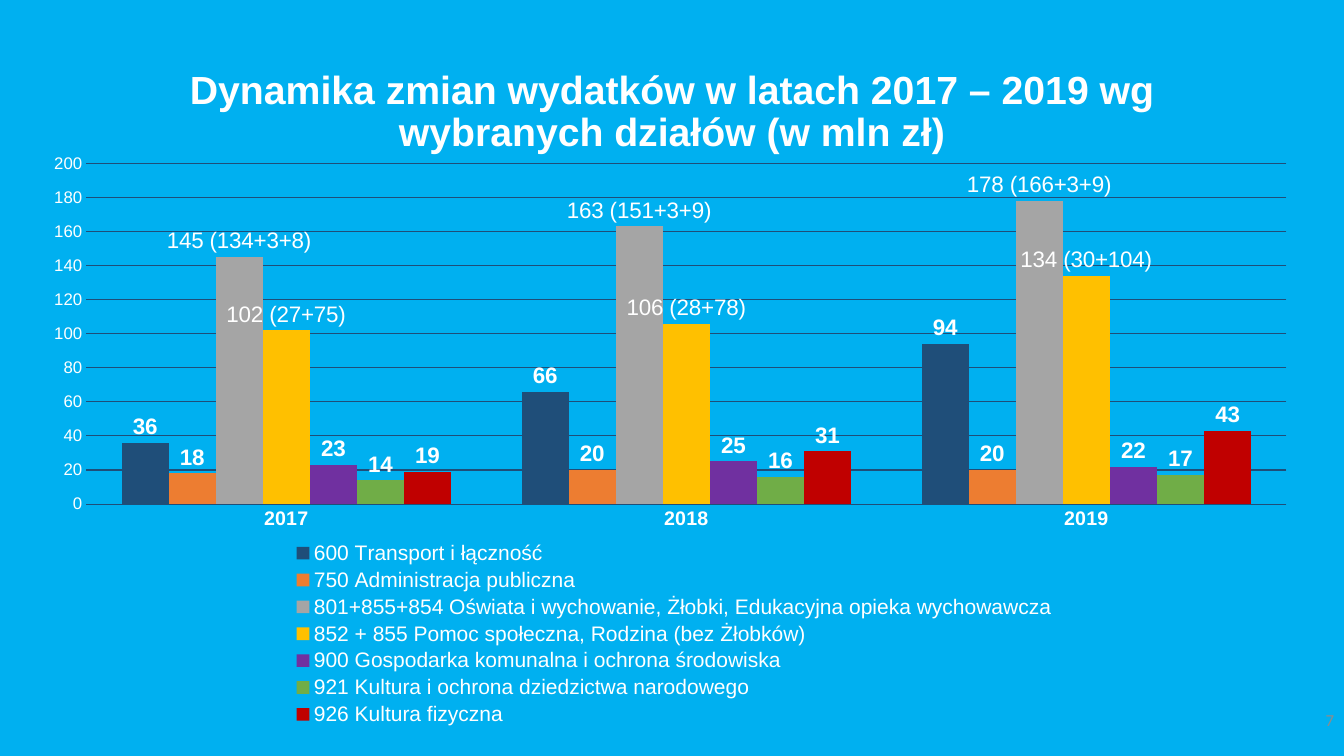
import pptx
import pptx.chart.data
import pptx.dml.color
import pptx.enum.chart
import pptx.enum.text
import pptx.oxml
import pptx.oxml.ns
import pptx.util

WIDE, HIGH = 13.33, 7.5
WHITE, SKY, NAVY, GREY = "FFFFFF", "00B0F0", "1F4E79", "8C8C8C"
YEARS = ["2017", "2018", "2019"]

# Name, colour, values, own label texts
SERIES = [
    ("600 Transport i łączność", NAVY, (36, 66, 94), ()),
    ("750 Administracja publiczna", "ED7D31", (18, 20, 20), ()),
    ("801+855+854 Oświata i wychowanie, Żłobki, Edukacyjna opieka wychowawcza",
     "A5A5A5", (145, 163, 178),
     ("145 (134+3+8)", "163 (151+3+9)", "178 (166+3+9)")),
    ("852 + 855 Pomoc społeczna, Rodzina (bez Żłobków)",
     "FFC000", (102, 106, 134),
     ("102 (27+75)", "106 (28+78)", "134 (30+104)")),
    ("900 Gospodarka komunalna i ochrona środowiska", "7030A0", (23, 25, 22), ()),
    ("921 Kultura i ochrona dziedzictwa narodowego", "70AD47", (14, 16, 17), ()),
    ("926 Kultura fizyczna", "C00000", (19, 31, 43), ()),
]


def tint(code):
    return pptx.dml.color.RGBColor.from_string(code)


def fill(part, code):
    part.fill.solid()
    part.fill.fore_color.rgb = tint(code)


def style(font, size, code=WHITE, bold=False, name="Arial"):
    values = {"size": pptx.util.Pt(size), "bold": bold, "name": name}
    for key, value in values.items():
        setattr(font, key, value)
    font.color.rgb = tint(code)


def place(left, top, width, height):
    """Turn shares of the slide into lengths."""
    shares = (left * WIDE, top * HIGH, width * WIDE, height * HIGH)
    return [pptx.util.Inches(share) for share in shares]


def write(slide, box, text, align, **look):
    frame = slide.shapes.add_textbox(*place(*box)).text_frame
    frame.word_wrap = True
    frame.vertical_anchor = pptx.enum.text.MSO_ANCHOR.MIDDLE
    line = frame.paragraphs[0]
    line.alignment = align
    line.line_spacing = 0.9
    run = line.add_run()
    run.text = text
    style(run.font, **look)


def layout(box, inner=False):
    """Make a manual layout from shares of the chart."""
    target = '<c:layoutTarget val="inner"/>' if inner else ""
    modes = "".join(f'<c:{k}Mode val="edge"/>' for k in "xy")
    sizes = "".join(f'<c:{k} val="{v}"/>' for k, v in zip("xywh", box))
    return pptx.oxml.parse_xml(
        f'<c:layout {pptx.oxml.ns.nsdecls("c")}><c:manualLayout>'
        f"{target}{modes}{sizes}</c:manualLayout></c:layout>")


def label(series, texts):
    spot = pptx.enum.chart.XL_LABEL_POSITION.OUTSIDE_END
    labels = series.data_labels
    labels.show_value = True
    labels.position = spot
    style(labels.font, 16, bold=True)
    for index, text in enumerate(texts):
        tag = series.points[index].data_label
        run = tag.text_frame.paragraphs[0].add_run()
        run.text = text
        style(run.font, 16)
        tag.position = spot


def trim(axis, size, bold=False):
    none = pptx.enum.chart.XL_TICK_MARK.NONE
    axis.major_tick_mark = axis.minor_tick_mark = none
    axis.format.line.fill.background()
    style(axis.tick_labels.font, size, bold=bold)


def draw(slide, box):
    data = pptx.chart.data.CategoryChartData()
    data.categories = YEARS
    for name, _, values, _ in SERIES:
        data.add_series(name, values)
    kind = pptx.enum.chart.XL_CHART_TYPE.COLUMN_CLUSTERED
    chart = slide.shapes.add_chart(kind, *place(*box), data).chart
    chart.has_title = False
    style(chart.font, 10, "000000", name="Calibri")

    # Columns
    plot = chart.plots[0]
    plot.gap_width, plot.overlap, plot.vary_by_categories = 150, 0, False
    for series, (_, code, _, texts) in zip(plot.series, SERIES):
        fill(series.format, code)
        label(series, texts)

    # Axes and grid
    trim(chart.category_axis, 14, True)
    axis = chart.value_axis
    trim(axis, 12)
    axis.minimum_scale, axis.maximum_scale, axis.major_unit = 0, 200, 20
    axis.has_major_gridlines = True
    grid = axis.major_gridlines.format.line
    grid.width = pptx.util.Pt(0.75)
    grid.color.rgb = tint(NAVY)

    # Legend
    chart.has_legend = True
    legend = chart.legend
    legend.position = pptx.enum.chart.XL_LEGEND_POSITION.BOTTOM
    legend.include_in_layout = False
    style(legend.font, 15)

    # Manual places of plot and legend
    tag = pptx.oxml.ns.qn
    root = chart.element
    area = root.find(".//" + tag("c:plotArea"))
    key = root.find(".//" + tag("c:legend"))
    for old in area.findall(tag("c:layout")) + key.findall(tag("c:layout")):
        old.getparent().remove(old)
    area.insert(0, layout((0.041, 0.016, 0.947, 0.586), True))
    key.find(tag("c:legendPos")).addnext(layout((0.2, 0.66, 0.61, 0.33)))


def main():
    deck = pptx.Presentation()
    deck.slide_width = pptx.util.Inches(WIDE)
    deck.slide_height = pptx.util.Inches(HIGH)
    slide = deck.slides.add_slide(deck.slide_layouts[6])
    fill(slide.background, SKY)

    align = pptx.enum.text.PP_ALIGN
    write(slide, (0.07, 0.053, 0.86, 0.193),
          "Dynamika zmian wydatków w latach 2017 – 2019 wg wybranych działów (w mln zł)",
          align.CENTER, size=28, bold=True)
    draw(slide, (0.0255, 0.204, 0.943, 0.769))
    write(slide, (0.707, 0.927, 0.293, 0.053), "7", align.RIGHT,
          size=12, code=GREY, name="Calibri")
    deck.save("out.pptx")


if __name__ == "__main__":
    main()
